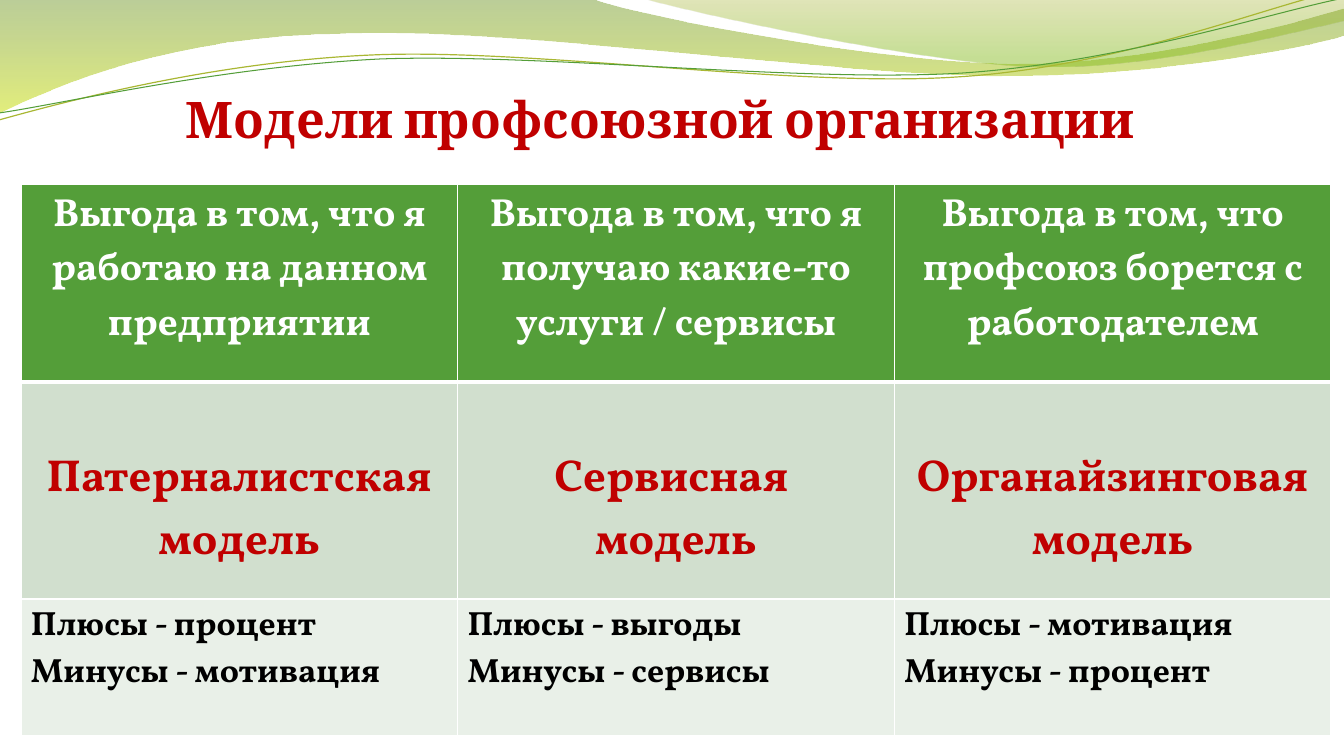
from pptx import Presentation
from pptx import util as u
from pptx.dml.color import RGBColor
from pptx.enum import text
from pptx.oxml import ns
from lxml import etree

PX = 914400 / 100.8
WHITE = RGBColor(0xFF, 0xFF, 0xFF)
BLACK = RGBColor(0, 0, 0)
RED = RGBColor(0xC0, 0, 0)
GREEN = RGBColor(0x54, 0x9E, 0x39)
SAGE = RGBColor(0xD1, 0xDF, 0xCE)
MIST = RGBColor(0xE9, 0xF0, 0xE8)
OLIVE = RGBColor(0xA9, 0xB7, 0x33)
MOSS = RGBColor(0x69, 0x92, 0x1C)
LIME = RGBColor(0xCC, 0xE1, 0x0F)
KHAKI = RGBColor(0x9B, 0xAA, 0x1A)
LEAF = RGBColor(0x81, 0xBA, 0x16)

# A pair is a straight step; six numbers are a cubic curve step.
BAND = [(0, 0), (592, -1), (639, 17, 891, 64, 1019, 64),
        (1145, 64, 1287, 26, 1344, 9), (1345, 36),
        (1322, 44, 1168, 77, 1002, 76), (836, 76, 513, 28, 346, 34),
        (173, 36, 61, 84, -2, 114)]
SWEEP = [(643, -1), (684, 11, 916, 62, 1033, 66),
         (1149, 70, 1292, 32, 1344, 21), (1344, 0)]
UPPER = [(-1, 120), (64, 102, 212, 62, 372, 55),
         (531, 48, 795, 88, 957, 77), (1119, 67, 1261, 8, 1341, -10)]
LOWER = [(-1, 113), (62, 104, 220, 67, 380, 59),
         (541, 53, 802, 83, 963, 73), (1123, 62, 1265, 14, 1344, -2)]

HEADS = ["Выгода в том, что я работаю на данном предприятии",
         "Выгода в том, что я получаю какие-то услуги / сервисы",
         "Выгода в том, что профсоюз борется с работодателем"]
MODELS = ["Патерналистская модель", "Сервисная \nмодель",
          "Органайзинговая модель"]
NOTES = ["Плюсы - процент\nМинусы - мотивация",
         "Плюсы - выгоды\nМинусы - сервисы",
         "Плюсы - мотивация\nМинусы - процент"]
MID, LEFT = text.PP_ALIGN.CENTER, text.PP_ALIGN.LEFT
# texts, height, top margin, size, colour, fill, alignment
ROWS = [(HEADS, 198, 5, 28, WHITE, GREEN, MID),
        (MODELS, 217, 67, 32, RED, SAGE, MID),
        (NOTES, 137, 5, 24, BLACK, MIST, LEFT)]


def px(n):
    return u.Emu(round(n * PX))


def outline(slide, steps, close):
    """Build the steps as lines, then join each curve's three lines."""
    dots = [(px(s[i]), px(s[i + 1])) for s in steps for i in range(0, len(s), 2)]
    pen = slide.shapes.build_freeform(*dots[0])
    pen.add_line_segments(dots[1:], close=close)
    shape = pen.convert_to_shape()
    shape.shadow.inherit = False
    lines = iter(list(shape.element.iter(ns.qn("a:lnTo"))))
    for step in steps[1:]:
        group = [next(lines) for _ in range(len(step) // 2)]
        if len(group) == 3:
            curve = etree.Element(ns.qn("a:cubicBezTo"))
            group[0].addprevious(curve)
            for line in group:
                curve.append(line[0])
                line.getparent().remove(line)
    return shape


def add_wave(slide, steps, stops):
    """Add a filled wave; each stop is colour, position, opacity percent."""
    shape = outline(slide, steps, True)
    shape.line.fill.background()
    shape.fill.gradient()
    shape.fill.gradient_angle = 270
    for stop, (color, place, _) in zip(shape.fill.gradient_stops, stops):
        stop.color.rgb = color
        stop.position = place
    tints = shape.element.spPr.iter(ns.qn("a:srgbClr"))
    for tint, (_, _, alpha) in zip(tints, stops):
        etree.SubElement(tint, ns.qn("a:alpha")).set("val", str(alpha * 1000))


def add_curve(slide, steps, color, width):
    shape = outline(slide, steps, False)
    shape.fill.background()
    shape.line.color.rgb = color
    shape.line.width = u.Pt(width)


def set_font(para, name, size, color):
    font = para.font
    font.name, font.size, font.bold = name, u.Pt(size), True
    font.color.rgb = color


def set_title(slide, words):
    title = slide.shapes.title
    title.element.getparent().append(title.element)  # in front of the waves
    title.left, title.top, title.width, title.height = map(px, (53, 29, 1215, 120))
    frame = title.text_frame
    frame.text = words
    frame.word_wrap = True
    frame.auto_size = text.MSO_AUTO_SIZE.NONE
    frame.vertical_anchor = text.MSO_ANCHOR.BOTTOM
    frame.margin_left = frame.margin_right = frame.margin_bottom = 0
    frame.margin_top = px(5)
    para = frame.paragraphs[0]
    para.alignment = MID
    set_font(para, "Cambria", 36, RED)


def set_edges(cell, top, bottom):
    """Draw white cell borders; top and bottom widths are in points."""
    props = cell._tc.get_or_add_tcPr()
    for side, width in (("L", 1), ("R", 1), ("T", top), ("B", bottom)):
        edge = etree.SubElement(props, ns.qn("a:ln" + side), w=str(u.Pt(width)))
        fill = etree.SubElement(edge, ns.qn("a:solidFill"))
        etree.SubElement(fill, ns.qn("a:srgbClr"), val=str(WHITE))


def add_grid(slide):
    high = sum(row[1] for row in ROWS)
    box = map(px, (21, 184, 1310, high))
    table = slide.shapes.add_table(len(ROWS), len(HEADS), *box).table
    table.horz_banding = False
    for r, (words, tall, pad, size, color, fill, align) in enumerate(ROWS):
        table.rows[r].height = px(tall)
        for c, word in enumerate(words):
            cell = table.cell(r, c)
            set_edges(cell, 3 if r == 1 else 1, 3 if r == 0 else 1)
            cell.fill.solid()
            cell.fill.fore_color.rgb = fill
            cell.margin_left = cell.margin_right = px(10)
            cell.margin_top, cell.margin_bottom = px(pad), px(5)
            cell.text = word
            for para in cell.text_frame.paragraphs:
                para.alignment = align
                set_font(para, "Vollkorn", size, color)


def main():
    deck = Presentation()
    deck.slide_width, deck.slide_height = px(1344), px(756)
    slide = deck.slides.add_slide(deck.slide_layouts[5])
    add_wave(slide, BAND, [(MOSS, 0, 45), (LIME, 1, 55)])
    add_wave(slide, SWEEP, [(KHAKI, 0, 30), (LEAF, 0.8, 45)])
    add_curve(slide, UPPER, OLIVE, 0.85)
    add_curve(slide, LOWER, GREEN, 0.75)
    set_title(slide, "Модели профсоюзной организации")
    add_grid(slide)
    deck.save("out.pptx")


if __name__ == "__main__":
    main()
